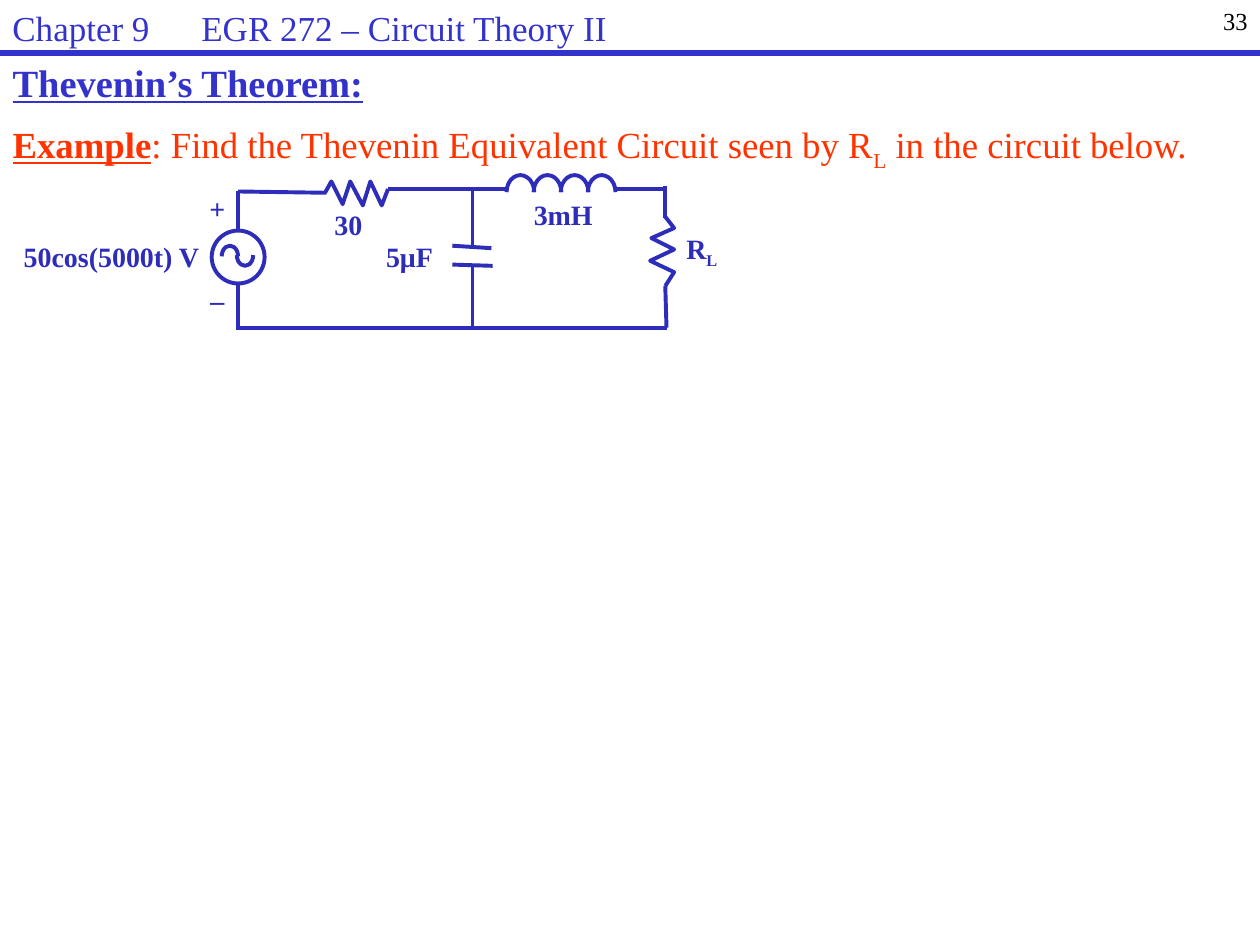
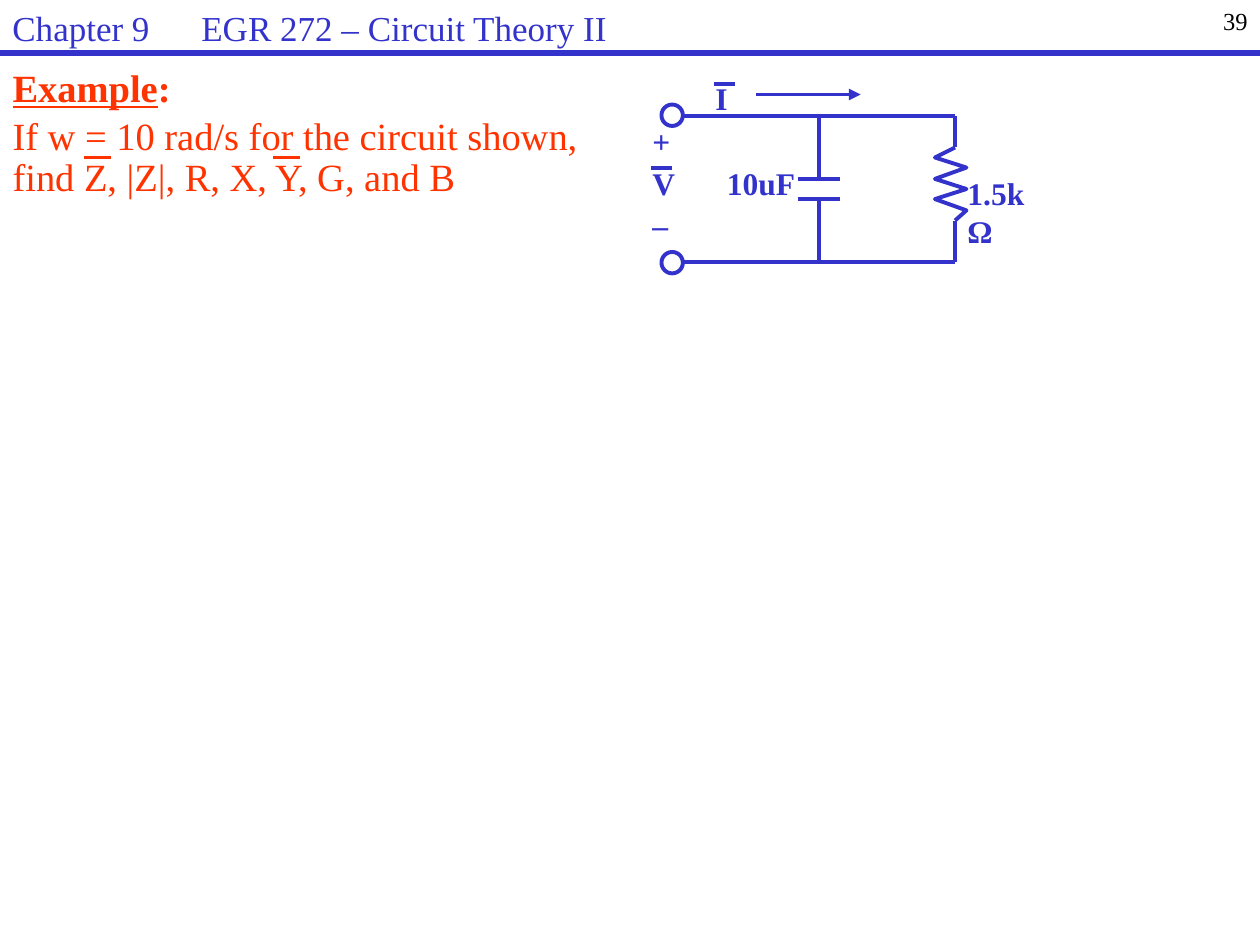
from lxml import etree
from pptx import Presentation
from pptx.dml.color import RGBColor
from pptx.enum import shapes, text
from pptx.oxml import ns
from pptx.util import Inches, Pt

BLUE = RGBColor(0x33, 0x33, 0xCC)
NAVY = RGBColor(0x2D, 0x2D, 0xB9)
RED = RGBColor(0xFF, 0x33, 0x00)
BLACK = RGBColor(0, 0, 0)
WHITE = RGBColor(255, 255, 255)
FONT = "Times New Roman"
HEAD = "Chapter 9\tEGR 272 – Circuit Theory II"

THEVENIN = {
    "page": "33",
    "title": ([("Thevenin’s Theorem:", "bu")], (0, 0.42, 8.83, 0.42), 22, BLUE),
    "body": ([("Example", "bu"),
              (": Find the Thevenin Equivalent Circuit seen by R", ""),
              ("L", "s"), (" in the circuit below.", "")],
             (0, 0.92, 10, 0.42), 21, RED),
    "space": 1,
    "ink": NAVY,
    "size": 16,
    "align": text.PP_ALIGN.CENTER,
    "rings": [(1.68, 1.83, 0.42, WHITE)],
    "wires": [
        (1.87, 2.6, 5.29, 2.6), (1.89, 1.52, 1.89, 1.83),
        (1.89, 2.24, 1.89, 2.61), (1.89, 1.52, 2.59, 1.53),
        (3.08, 1.5, 4.01, 1.5), (4.87, 1.5, 5.29, 1.5),
        (3.75, 1.5, 3.75, 1.96), (3.75, 2.11, 3.75, 2.59),
        (3.59, 1.95, 3.9, 1.97), (3.59, 2.1, 3.91, 2.11),
        (5.28, 1.48, 5.28, 1.73), (5.28, 2.27, 5.29, 2.6)],
    "zigzags": [
        [(2.58, 1.53), (2.63, 1.44), (2.72, 1.62), (2.78, 1.44),
         (2.88, 1.63), (2.94, 1.44), (3.03, 1.63), (3.08, 1.5)],
        [(5.28, 1.72), (5.35, 1.81), (5.17, 1.89), (5.35, 1.98),
         (5.16, 2.07), (5.35, 2.16), (5.28, 2.27)]],
    "labels": [
        ([("+", "b")], (1.56, 1.47, 0.33)),
        ([("_", "b")], (1.56, 2.12, 0.33)),
        ([("50cos(5000t) V", "b")], (0.08, 1.85, 1.61)),
        ([("30", "b")], (2.55, 1.6, 0.43)),
        ([("3mH", "b")], (4.13, 1.52, 0.68)),
        ([("5μF", "b")], (2.96, 1.85, 0.58)),
        ([("R", "b"), ("L", "bs")], (5.34, 1.79, 0.46))],
}

LEFT, MID, RIGHT = 5.42, 6.5, 7.58
TOP, LOW = 0.92, 2.08
PARALLEL = {
    "page": "39",
    "title": ([("Example", "bu"), (":", "b")], (0, 0.5, 5.08, 0.42), 22, RED),
    "body": ([("If w = 10 rad/s for the circuit shown, "
               "find Z, |Z|, R, X, Y, G, and B", "")],
             (0, 0.88, 5.08, 1.2), 22, RED),
    "space": 0.9,
    "ink": BLUE,
    "size": 18,
    "align": text.PP_ALIGN.LEFT,
    "rings": [(5.25, y, 0.17, None) for y in (0.83, 2)],
    "wires": [
        (RIGHT, TOP, LEFT, TOP), (RIGHT, LOW, LEFT, LOW),
        (RIGHT, 1.17, RIGHT, TOP), (RIGHT, LOW, RIGHT, 1.75),
        (MID, 1.42, MID, TOP), (MID, LOW, MID, 1.58),
        (6.33, 1.42, 6.67, 1.42), (6.33, 1.58, 6.67, 1.58),
        (5.17, 1.33, 5.33, 1.33), (5.67, 0.67, 5.83, 0.67)],
    "zigzags": [
        [(RIGHT, 1.17), (7.42, 1.25), (7.67, 1.33), (7.42, 1.42),
         (7.67, 1.5), (7.42, 1.58), (7.67, 1.67), (RIGHT, 1.75)]],
    "labels": [
        ([("V", "b")], (5.08, 1.25, 0.38)),
        ([("I", "b")], (5.58, 0.58, 0.3)),
        ([("+", "b")], (5.08, 0.92, 0.34)),
        ([("_", "b")], (5.08, 1.5, 0.33)),
        ([("10uF", "b")], (5.67, 1.25, 0.74))],
}


def write(box, runs, size, ink, align=text.PP_ALIGN.LEFT, wrap=True, space=1):
    frame = box.text_frame
    frame.auto_size = text.MSO_AUTO_SIZE.NONE
    frame.word_wrap = wrap
    frame.vertical_anchor = text.MSO_ANCHOR.TOP
    para = frame.paragraphs[0]
    para.alignment = align
    para.line_spacing = space
    for words, style in runs:
        run = para.add_run()
        run.text = words
        font = run.font
        font.name, font.size = FONT, Pt(size)
        font.color.rgb = ink
        font.bold, font.underline = "b" in style, "u" in style
        if "s" in style:
            run._r.get_or_add_rPr().set("baseline", "-25000")
    return para


def label(slide, runs, spot, size, ink, **look):
    box = slide.shapes.add_textbox(*map(Inches, spot))
    return write(box, runs, size, ink, **look)


def fill_in(holder, part, space):
    runs, spot, size, ink = part
    holder.left, holder.top, holder.width, holder.height = map(Inches, spot)
    para = write(holder, runs, size, ink, space=space)
    para.space_before = Pt(2)
    props = para._p.get_or_add_pPr()
    props.set("marL", "0")
    props.set("indent", "0")
    etree.SubElement(props, ns.qn("a:buNone"))


def wire(slide, ends, ink, width=2.25):
    line = slide.shapes.add_connector(
        shapes.MSO_CONNECTOR.STRAIGHT, *map(Inches, ends))
    line.line.color.rgb, line.line.width = ink, Pt(width)
    etree.SubElement(line._element.spPr, ns.qn("a:effectLst"))
    return line


def outline(shape, ink, fill=None):
    shape.shadow.inherit = False
    shape.line.color.rgb, shape.line.width = ink, Pt(2.25)
    if fill is None:
        shape.fill.background()
    else:
        shape.fill.solid()
        shape.fill.fore_color.rgb = fill


def arc(slide, spot, start, end, ink):
    curve = slide.shapes.add_shape(shapes.MSO_SHAPE.ARC, *map(Inches, spot))
    curve.adjustments[0], curve.adjustments[1] = start, end
    outline(curve, ink)


def zigzag(slide, points, ink):
    spots = [(Inches(x), Inches(y)) for x, y in points]
    path = slide.shapes.build_freeform(*spots[0])
    path.add_line_segments(spots[1:], close=False)
    outline(path.convert_to_shape(), ink)


def build(deck, plan):
    slide = deck.slides.add_slide(deck.slide_layouts[1])
    ink = plan["ink"]
    fill_in(slide.shapes.title, plan["title"], plan["space"])
    fill_in(slide.placeholders[1], plan["body"], plan["space"])

    label(slide, [(plan["page"], "")], (7.92, 0, 2.08, 0.42), 14, BLACK,
          align=text.PP_ALIGN.RIGHT)
    wire(slide, (0, 0.42, 10, 0.42), BLUE, 3)
    head = label(slide, [(HEAD, "")], (0, 0, 7.33, 0.33), 20, BLUE)
    head.space_before = Pt(2)
    tabs = etree.SubElement(head._p.get_or_add_pPr(), ns.qn("a:tabLst"))
    etree.SubElement(tabs, ns.qn("a:tab"), pos=str(Inches(1.5)), algn="l")

    for x, y, size, fill in plan["rings"]:
        ring = slide.shapes.add_shape(
            shapes.MSO_SHAPE.OVAL, *map(Inches, (x, y, size, size)))
        outline(ring, ink, fill)
    for ends in plan["wires"]:
        wire(slide, ends, ink)
    for points in plan["zigzags"]:
        zigzag(slide, points, ink)
    for runs, spot in plan["labels"]:
        label(slide, runs, (*spot, 0.4), plan["size"], ink,
              align=plan["align"], wrap=False)
    return slide


def main():
    deck = Presentation()
    deck.slide_width, deck.slide_height = Inches(10), Inches(7.5)

    slide = build(deck, THEVENIN)
    for turn in range(4):
        arc(slide, (4.02 + 0.215 * turn, 1.39, 0.22, 0.27), 108, 0, NAVY)
    arc(slide, (1.76, 1.95, 0.13, 0.17), 108, 0, NAVY)
    arc(slide, (1.88, 1.94, 0.13, 0.17), 0, 108, NAVY)

    slide = build(deck, PARALLEL)
    label(slide, [("1.5kΩ", "b")], (7.58, 1.33, 0.75, 0.7), 18, BLUE)
    arrow = wire(slide, (6, 0.75, 6.83, 0.75), BLUE)
    etree.SubElement(arrow.line._get_or_add_ln(), ns.qn("a:tailEnd"),
                     type="triangle")
    for x in (0.67, 2.17):
        wire(slide, (x, 1.25, x + 0.21, 1.25), RED)

    deck.save("out.pptx")


if __name__ == "__main__":
    main()
